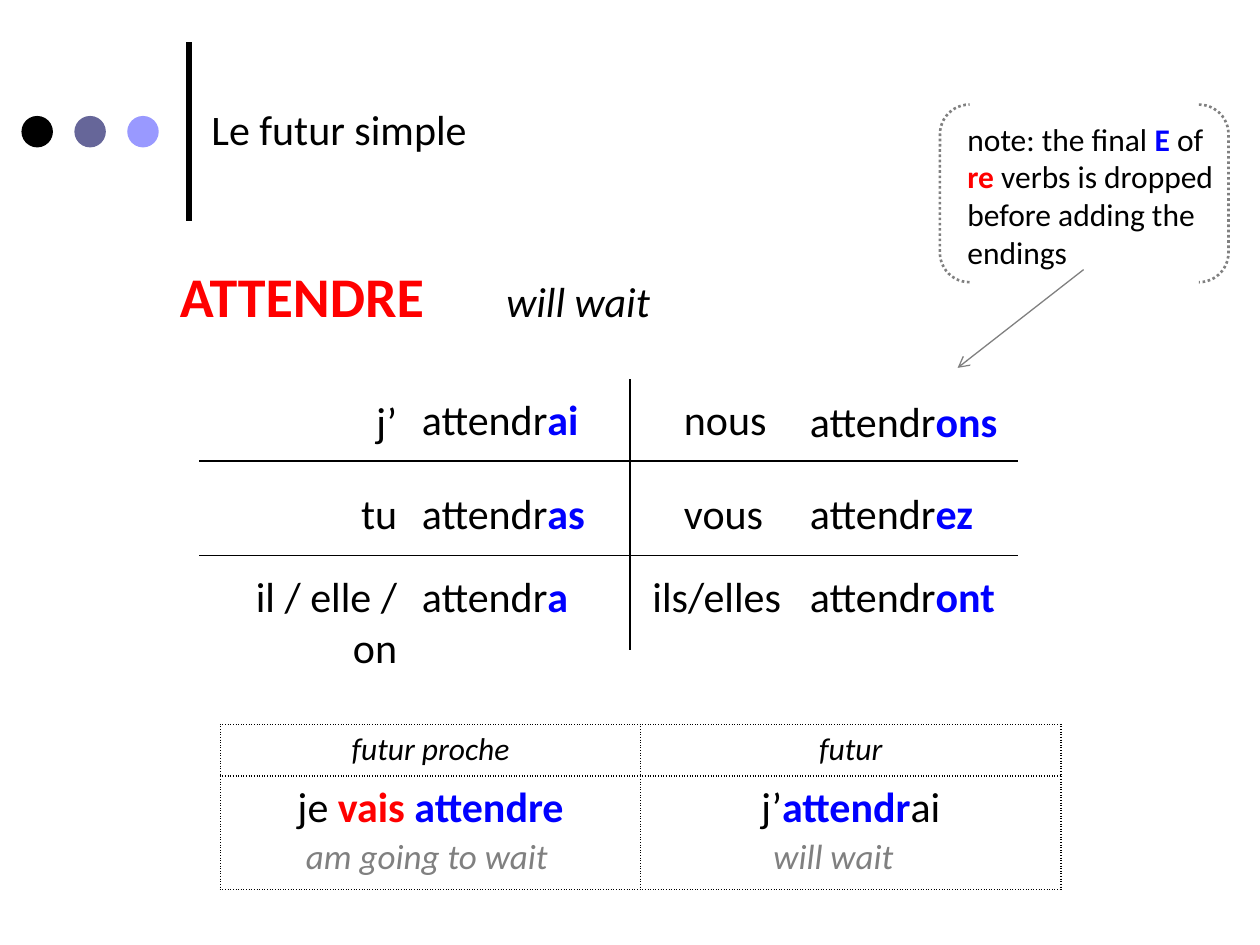
import pptx
import pptx.util
import pptx.dml.color
import pptx.enum.dml
import pptx.enum.shapes
import pptx.enum.text
import pptx.oxml
import pptx.oxml.ns
import lxml.etree

Inches, Pt = pptx.util.Inches, pptx.util.Pt
ALIGN = pptx.enum.text.PP_ALIGN
SHAPE = pptx.enum.shapes.MSO_SHAPE
BLACK, RED, BLUE, GRAY = "000000", "FF0000", "0000FF", "808080"

DOTS = ["000000", "666699", "9999FF"]
LABELS = [
    (1.58, 0.77, 8.17, 0.51, [("Le futur simple", BLACK, "")], 24),
    (1.33, 2.03, 2.42, 0.64, [("ATTENDRE", RED, "b")], 32),
    (3.92, 2.14, 2.83, 0.5, [("will wait", BLACK, "i")], 24),
    (7.58, 0.9, 2.33, 1.31, [
        ("note: the final ", BLACK, ""), ("E ", BLUE, "b"), ("of ", BLACK, ""),
        ("re", RED, "b"),
        (" verbs is dropped before adding the endings", BLACK, "")], 18),
]
GLOSSES = [
    (2.33, 6.57, 2.17, 0.44, [("am going to wait", GRAY, "i")], 20),
    (6.04, 6.57, 1.62, 0.44, [("will wait", GRAY, "i")], 20),
]
STEM = "attendr"
SINGULAR = [("j’", 2.67, 3.09, "ai", 3.07), ("tu", 2.5, 3.82, "as", 3.82),
            ("il / elle / on", 1.58, 4.48, "a", 4.48)]
PLURAL = [("nous", 5.33, 3.07, "ons", 3.09), ("vous", 5.33, 3.82, "ez", 3.82),
          ("ils/elles", 5.08, 4.48, "ont", 4.48)]
RULES = [(1.58, 3.66, 8.08, 3.66), (1.58, 4.41, 8.08, 4.41), (5, 3.01, 5, 5.16)]
TENSES = [
    (0.41, 18, [[("futur proche", BLACK, "i")], [("futur", BLACK, "i")]]),
    (0.9, 24, [
        [("je ", BLACK, ""), ("vais ", RED, "b"), ("attendre", BLUE, "b")],
        [("j’", BLACK, ""), ("attendr", BLUE, "b"), ("ai", BLACK, "")]]),
]


def rgb(color):
    return pptx.dml.color.RGBColor.from_string(color)


def write(tf, runs, size, align=ALIGN.LEFT):
    p = tf.paragraphs[0]
    p.alignment = align
    for text, color, style in runs:
        r = p.add_run()
        r.text = text
        r.font.name = "Calibri"
        r.font.size = Pt(size)
        r.font.color.rgb = rgb(color)
        r.font.bold = "b" in style
        r.font.italic = "i" in style


def add_text(s, x, y, w, h, runs, size=24, align=ALIGN.LEFT):
    tf = s.shapes.add_textbox(Inches(x), Inches(y), Inches(w), Inches(h)).text_frame
    tf.word_wrap = True
    write(tf, runs, size, align)


def add_line(s, x1, y1, x2, y2, color=BLACK, width=0.75):
    sp = s.shapes.add_connector(pptx.enum.shapes.MSO_CONNECTOR.STRAIGHT,
                                Inches(x1), Inches(y1), Inches(x2), Inches(y2))
    sp.line.color.rgb = rgb(color)
    sp.line.width = Pt(width)
    lxml.etree.SubElement(sp._element.spPr, pptx.oxml.ns.qn("a:effectLst"))
    return sp


def add_shape(s, kind, x, y, w, h):
    sp = s.shapes.add_shape(kind, Inches(x), Inches(y), Inches(w), Inches(h))
    sp.shadow.inherit = False
    return sp


def border(cell):
    tcPr = cell._tc.get_or_add_tcPr()
    for i, side in enumerate(("lnL", "lnR", "lnT", "lnB")):
        tcPr.insert(i, pptx.oxml.parse_xml(
            f'<a:{side} {pptx.oxml.ns.nsdecls("a")} w="{Pt(1)}">'
            f'<a:solidFill><a:srgbClr val="{BLACK}"/></a:solidFill>'
            f'<a:prstDash val="sysDot"/></a:{side}>'))


def add_tenses(s):
    table = s.shapes.add_table(2, 2, Inches(1.75), Inches(5.75),
                               Inches(6.67), Inches(1.31)).table
    table.first_row = table.horz_banding = False
    for row, (height, size, cells) in enumerate(TENSES):
        table.rows[row].height = Inches(height)
        for col, runs in enumerate(cells):
            cell = table.cell(row, col)
            cell.fill.background()
            write(cell.text_frame, runs, size, ALIGN.CENTER)
            border(cell)


def main():
    prs = pptx.Presentation()
    prs.slide_width, prs.slide_height = Inches(10), Inches(7.5)
    s = prs.slides.add_slide(prs.slide_layouts[6])

    add_line(s, 1.5, 1.75, 1.5, 0.33, width=3)
    for i, color in enumerate(DOTS):
        sp = add_shape(s, SHAPE.OVAL, 0.17 + 0.42 * i, 0.92, 0.25, 0.25)
        sp.fill.solid()
        sp.fill.fore_color.rgb = rgb(color)
        sp.line.fill.background()

    for label in LABELS:
        add_text(s, *label)
    for rule in RULES:
        add_line(s, *rule)

    for forms, right, verb_x, verb_w, align in (
            (SINGULAR, 3.25, 3.25, 1.67, ALIGN.RIGHT),
            (PLURAL, 6.41, 6.33, 2.08, ALIGN.LEFT)):
        for pronoun, x, y, ending, verb_y in forms:
            add_text(s, x, y, right - x, 0.51, [(pronoun, BLACK, "")], align=align)
            add_text(s, verb_x, verb_y, verb_w, 0.51,
                     [(STEM, BLACK, ""), (ending, BLUE, "b")])

    add_tenses(s)

    sp = add_shape(s, SHAPE.DOUBLE_BRACKET, 7.46, 0.83, 2.29, 1.41)
    sp.fill.background()
    sp.line.color.rgb = rgb(GRAY)
    sp.line.width = Pt(1.5)
    sp.line.dash_style = pptx.enum.dml.MSO_LINE.ROUND_DOT

    sp = add_line(s, 8.6, 2.14, 7.6, 2.92, GRAY)
    lxml.etree.SubElement(sp.line._get_or_add_ln(),
                          pptx.oxml.ns.qn("a:tailEnd"), type="arrow")

    for gloss in GLOSSES:
        add_text(s, *gloss)
    prs.save("out.pptx")


if __name__ == "__main__":
    main()
